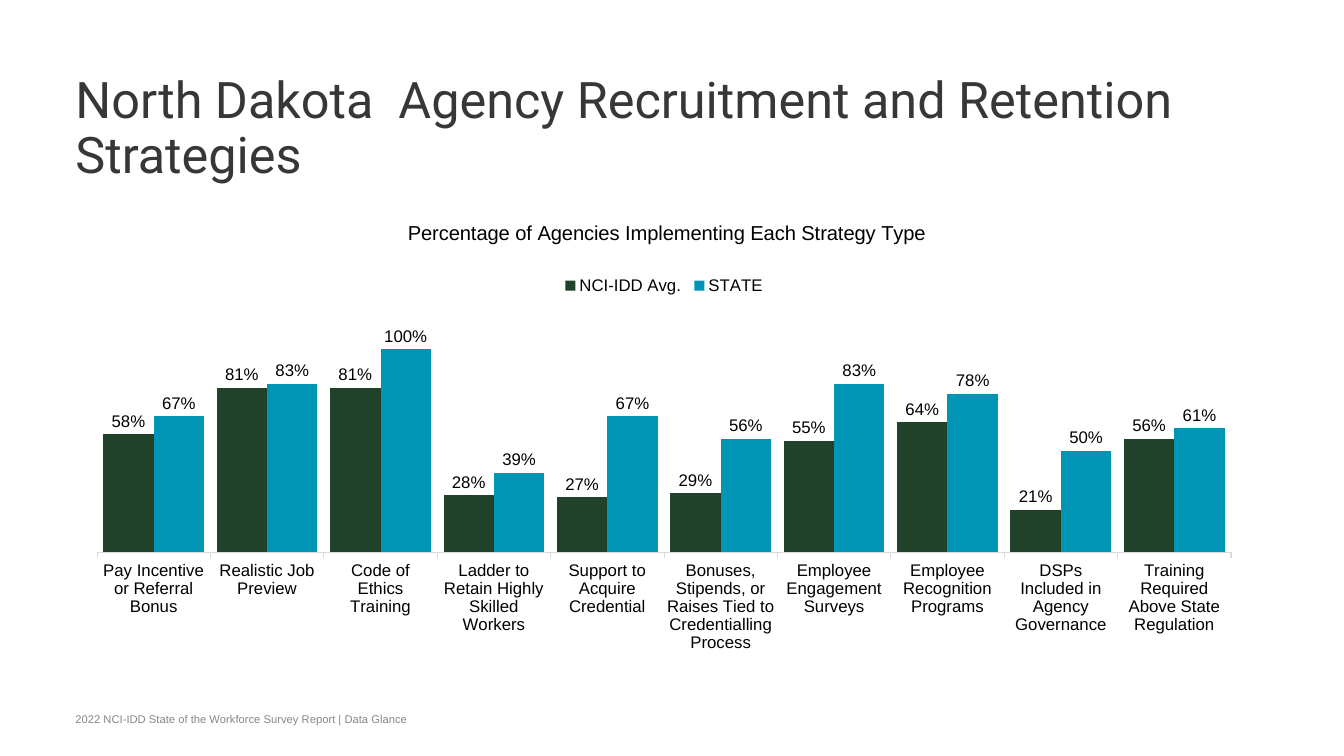
from lxml import etree
from pptx import Presentation
from pptx import util as u
from pptx.chart import data as chart_data
from pptx.dml import color
from pptx.enum import chart as ch, text
from pptx.oxml import ns

COLORS = {
    "title": "373737",
    "footer": "878787",
    "text": "000000",
    "axis": "D9D9D9",
    "NCI-IDD Avg.": "20412A",
    "STATE": "0094B5",
}
STRATEGIES = [
    ("Pay Incentive or Referral Bonus", 0.58, 0.67),
    ("Realistic Job Preview", 0.81, 0.83),
    ("Code of Ethics Training", 0.81, 1),
    ("Ladder to Retain Highly Skilled Workers", 0.28, 0.39),
    ("Support to Acquire Credential", 0.27, 0.67),
    ("Bonuses, Stipends, or Raises Tied to Credentialling Process", 0.29, 0.56),
    ("Employee Engagement Surveys", 0.55, 0.83),
    ("Employee Recognition Programs", 0.64, 0.78),
    ("DSPs Included in Agency Governance", 0.21, 0.5),
    ("Training Required Above State Regulation", 0.56, 0.61),
]


def rgb(name):
    return color.RGBColor.from_string(COLORS[name])


def style_font(font, size, name="text", face="Arial"):
    font.size = u.Pt(size)
    font.name = face
    font.bold = False
    font.color.rgb = rgb(name)


def place(shape, left, top, width, height):
    shape.left, shape.top = u.Cm(left), u.Cm(top)
    shape.width, shape.height = u.Cm(width), u.Cm(height)


def write_text(box, words, size, name, face, anchor):
    frame = box.text_frame
    frame.text = words
    frame.word_wrap = True
    frame.auto_size = text.MSO_AUTO_SIZE.NONE
    frame.vertical_anchor = anchor
    frame.margin_left = frame.margin_right = 0
    frame.margin_top = frame.margin_bottom = 0
    para = frame.paragraphs[0]
    para.alignment = text.PP_ALIGN.LEFT
    style_font(para.runs[0].font, size, name, face)
    return para


def set_layout(parent, before, **values):
    for old in parent.findall(ns.qn("c:layout")):
        parent.remove(old)
    layout = etree.Element(ns.qn("c:layout"))
    manual = etree.SubElement(layout, ns.qn("c:manualLayout"))
    for tag, value in values.items():
        etree.SubElement(manual, ns.qn(f"c:{tag}")).set("val", str(value))
    parent.find(ns.qn(before)).addprevious(layout)


def style_axes(chart):
    values = chart.value_axis
    values.minimum_scale, values.maximum_scale = 0, 1.2
    values.has_major_gridlines = False
    values.tick_labels.number_format = "0%"
    values.tick_labels.number_format_is_linked = False
    values.visible = False
    categories = chart.category_axis
    categories.major_tick_mark = ch.XL_TICK_MARK.OUTSIDE
    categories.format.line.color.rgb = rgb("axis")
    categories.format.line.width = u.Pt(0.75)
    style_font(categories.tick_labels.font, 12)


def style_bars(plot):
    plot.gap_width = 25
    plot.overlap = 0
    plot.vary_by_categories = False
    for series in plot.series:
        series.format.fill.solid()
        series.format.fill.fore_color.rgb = rgb(series.name)
        labels = series.data_labels
        labels.show_value = True
        labels.position = ch.XL_LABEL_POSITION.OUTSIDE_END
        labels.number_format = "0%"
        labels.number_format_is_linked = False
        style_font(labels.font, 12)


def add_strategy_chart(page):
    names, average, state = zip(*STRATEGIES)
    data = chart_data.CategoryChartData(number_format="0%")
    data.categories = names
    data.add_series("NCI-IDD Avg.", average)
    data.add_series("STATE", state)
    frame = page.shapes.add_chart(
        ch.XL_CHART_TYPE.COLUMN_CLUSTERED,
        u.Cm(1.85), u.Cm(4.98), u.Cm(29.77), u.Cm(11.68), data)
    chart = frame.chart
    style_font(chart.font, 12)
    chart.has_title = True
    para = chart.chart_title.text_frame.paragraphs[0]
    para.text = "Percentage of Agencies Implementing Each Strategy Type"
    style_font(para.runs[0].font, 14.4)
    chart.has_legend = True
    chart.legend.position = ch.XL_LEGEND_POSITION.TOP
    chart.legend.include_in_layout = False
    style_font(chart.legend.font, 12)
    style_axes(chart)
    style_bars(chart.plots[0])

    area = chart.plots[0]._element.getparent()
    set_layout(area, "c:barChart", layoutTarget="inner", xMode="edge",
               yMode="edge", x=0.02, y=0.24, w=0.96, h=0.525)
    set_layout(chart.legend._element, "c:overlay", xMode="edge",
               yMode="edge", x=0.41, y=0.165, w=0.18, h=0.05)
    set_layout(chart.chart_title._element, "c:overlay", xMode="edge",
               yMode="edge", x=0.28, y=0.04)


def add_title(page):
    title = page.shapes.title
    place(title, 1.9, 1.9, 30.05, 3.05)
    para = write_text(title, "North Dakota  Agency Recruitment and Retention Strategies",
                      36, "title", "Roboto", text.MSO_ANCHOR.TOP)
    para.line_spacing = 0.9


def add_footer(page):
    box = page.shapes.add_textbox(u.Cm(1.9), u.Cm(17.91), u.Cm(19.96), u.Cm(0.38))
    write_text(box, "2022 NCI-IDD State of the Workforce Survey Report | Data Glance",
               8, "footer", "Arial", text.MSO_ANCHOR.BOTTOM)


def main():
    deck = Presentation()
    deck.slide_width, deck.slide_height = u.Cm(33.87), u.Cm(19.05)
    page = deck.slides.add_slide(deck.slide_layouts[5])
    add_strategy_chart(page)
    add_footer(page)
    add_title(page)
    deck.save("out.pptx")


if __name__ == "__main__":
    main()
